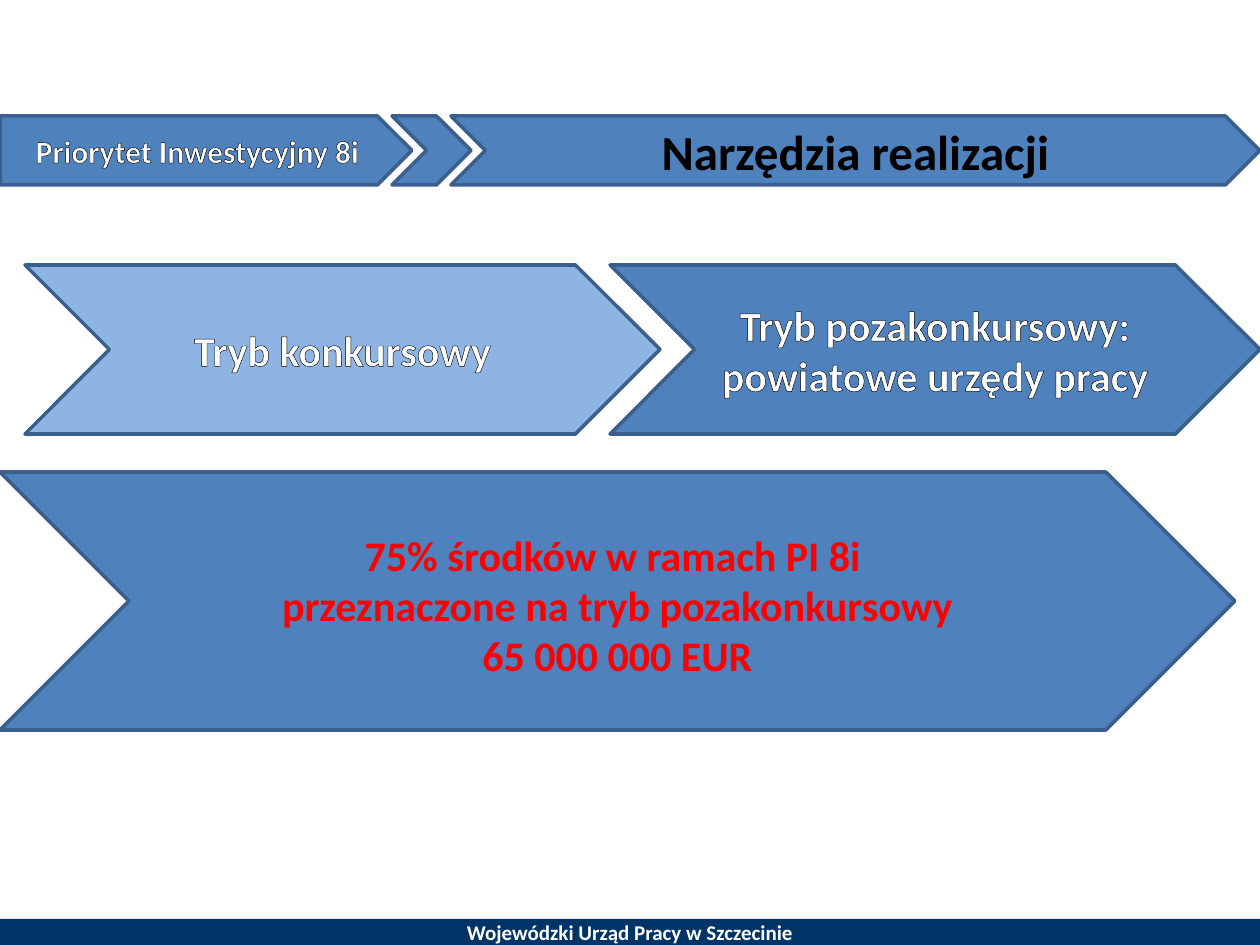
from lxml.etree import SubElement
from pptx import Presentation
from pptx.dml.color import RGBColor
from pptx.enum.shapes import MSO_SHAPE as Preset
from pptx.enum.text import MSO_ANCHOR as Anchor, PP_ALIGN as Align
from pptx.oxml.ns import qn
from pptx.util import Pt

PX = 914400 // 126
NAVY, BLUE, PALE, EDGE = "003366", "4F81BD", "8EB4E3", "3A5F8C"
WHITE, BLACK, RED = "FFFFFF", "000000", "FF0000"

FOOTER = dict(box=(0, 919, 1260, 26), preset=Preset.RECTANGLE, fill=NAVY, edge=None,
              lines=["Wojewódzki Urząd Pracy w Szczecinie"], size=12, wrap=False)
HEADER = [
    dict(box=(0, 116, 412, 69), preset=Preset.PENTAGON,
         lines=["Priorytet Inwestycyjny 8i"], size=18, outline=0.75),
    dict(box=(451, 116, 809, 69), lines=["Narzędzia realizacji"], size=28,
         color=BLACK, anchor=Anchor.TOP, insets=(5, 0)),
    dict(box=(392, 116, 79, 69)),
]
MODES = [
    dict(box=(25, 265, 635, 169), fill=PALE, lines=["Tryb konkursowy"], outline=0.75),
    dict(box=(610, 265, 650, 169), outline=0.75,
         lines=["Tryb pozakonkursowy:", "powiatowe urzędy pracy"]),
]
FUNDS = dict(box=(0, 472, 1235, 258), color=RED, outline=0.25,
             anchor=Anchor.TOP, insets=(57, 6),
             lines=["75% środków w ramach PI 8i ",
                    "przeznaczone na tryb pozakonkursowy", "65 000 000 EUR"])


def rgb(value):
    return RGBColor.from_string(value)


def outline_text(run, width):
    properties = run.font._element
    stroke = SubElement(properties, qn("a:ln"), w=str(Pt(width)))
    SubElement(SubElement(stroke, qn("a:solidFill")), qn("a:srgbClr"), val=BLACK)
    properties.insert(0, stroke)


def add_band(slide, box, lines=(), preset=Preset.CHEVRON, fill=BLUE, edge=EDGE, size=24,
             color=WHITE, outline=0, anchor=Anchor.MIDDLE, insets=(6, 6), wrap=True):
    band = slide.shapes.add_shape(preset, *(length * PX for length in box))
    band.shadow.inherit = False
    band.fill.solid()
    band.fill.fore_color.rgb = rgb(fill)
    if edge:
        band.line.color.rgb = rgb(edge)
        band.line.width = Pt(2)
    else:
        band.line.fill.background()
    frame = band.text_frame
    frame.word_wrap = wrap
    frame.vertical_anchor = anchor
    frame.margin_top, frame.margin_bottom = (inset * PX for inset in insets)
    frame.text = "\n".join(lines)
    for paragraph in frame.paragraphs:
        paragraph.alignment = Align.CENTER
        for run in paragraph.runs:
            run.font.name, run.font.size, run.font.bold = "Calibri", Pt(size), True
            run.font.color.rgb = rgb(color)
            if outline:
                outline_text(run, outline)


def main():
    """Build the slide on how the funds are distributed."""
    deck = Presentation()
    deck.slide_width, deck.slide_height = 1260 * PX, 945 * PX
    slide = deck.slides.add_slide(deck.slide_layouts[6])
    for band in [FOOTER, *HEADER, *MODES, FUNDS]:
        add_band(slide, **band)
    deck.save("out.pptx")


if __name__ == "__main__":
    main()
